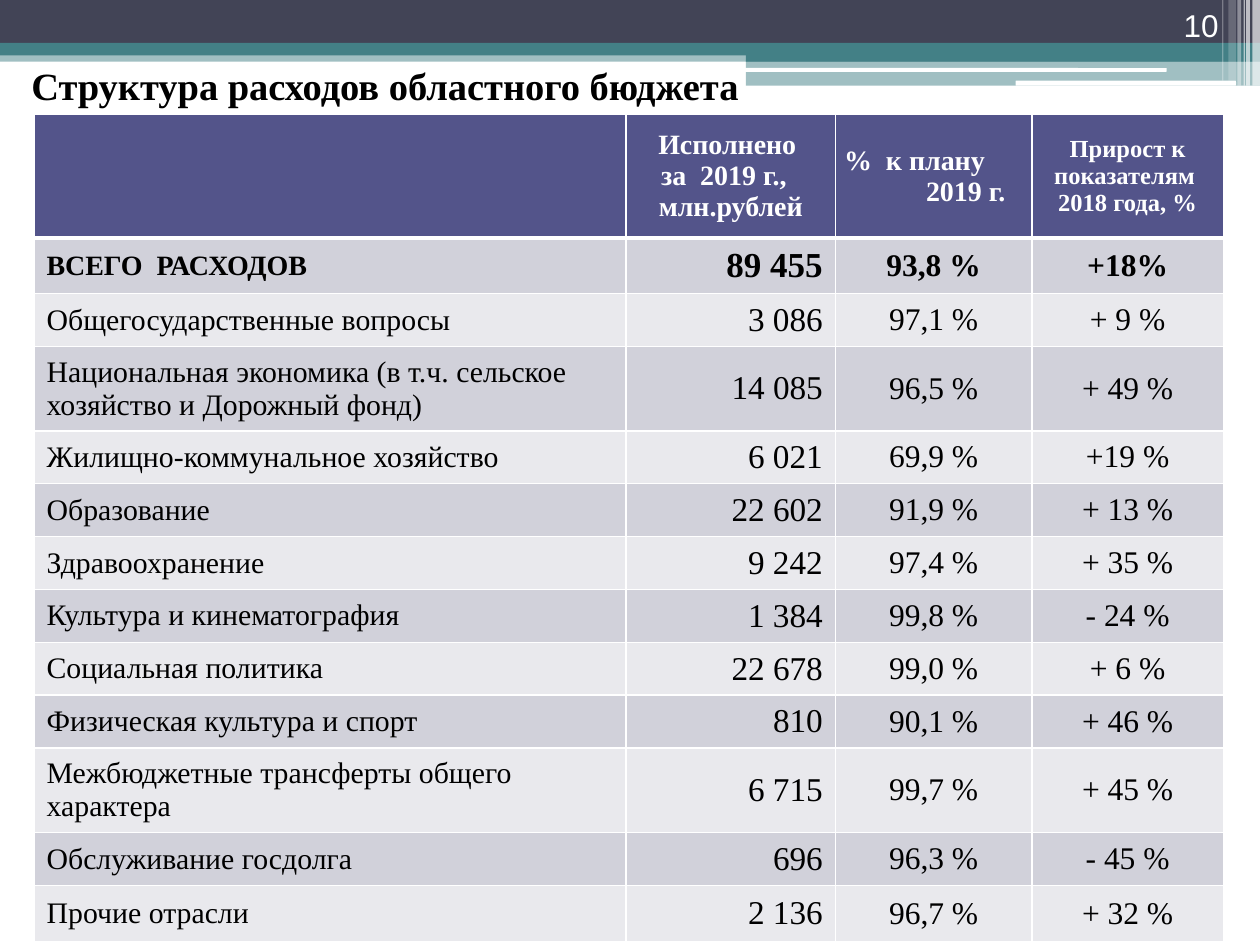
from lxml.etree import SubElement
from pptx import Presentation
from pptx.dml.color import RGBColor
from pptx.enum.shapes import MSO_SHAPE
from pptx.enum.text import MSO_ANCHOR, PP_ALIGN
from pptx.oxml.ns import qn
from pptx.util import Inches, Pt

WHITE = RGBColor(0xFF, 0xFF, 0xFF)
BLACK = RGBColor(0x00, 0x00, 0x00)
SLATE = RGBColor(0x42, 0x44, 0x56)
TEAL = RGBColor(0x43, 0x80, 0x86)
INDIGO = RGBColor(0x53, 0x54, 0x8A)
BAND_DARK = RGBColor(0xD1, 0xD1, 0xDA)
BAND_LIGHT = RGBColor(0xE9, 0xE9, 0xED)
SERIF = "Times New Roman"

deck = Presentation()
deck.slide_width, deck.slide_height = Inches(10), Inches(7.5)
slide = deck.slides.add_slide(deck.slide_layouts[6])

# Grid of 100 columns by 75 rows
COL = deck.slide_width / 100
ROW = deck.slide_height / 75


def place(left, top, width, height):
    return int(left * COL), int(top * ROW), int(width * COL), int(height * ROW)


def write(frame, text, size=18, font=SERIF, color=BLACK, bold=False,
          align=PP_ALIGN.LEFT, hang=None):
    """Fill a frame, one paragraph per line; hang is (left margin, first-line indent)."""
    frame.word_wrap = True
    for number, line in enumerate(text.split("\n")):
        paragraph = frame.add_paragraph() if number else frame.paragraphs[0]
        paragraph.text = line
        paragraph.alignment = align
        if hang:
            properties = paragraph._p.get_or_add_pPr()
            properties.set("marL", str(int(hang[0] * COL)))
            properties.set("indent", str(int(hang[1] * COL)))
        for run in paragraph.runs:
            run.font.size, run.font.name, run.font.bold = Pt(size), font, bold
            run.font.color.rgb = color


# Header bands, white rules and the stripes at the right edge
BAR, RULE = MSO_SHAPE.RECTANGLE, MSO_SHAPE.ROUNDED_RECTANGLE
header_parts = [
    (BAR, 0, 4, 100, 0.9, TEAL, 50),
    (BAR, 0, 0, 100, 3.4, SLATE, 100),
    (BAR, 0, 3.4, 100, 1, TEAL, 100),
    (BAR, 59.2, 3.9, 40.8, 1, TEAL, 100),
    (BAR, 59.2, 4.8, 40.8, 2, TEAL, 50),
    (RULE, 59.1, 5.4, 33.5, 0.3, WHITE, 100),
    (RULE, 80.6, 6.4, 17.5, 0.4, WHITE, 100),
    (BAR, 99.4, 0, 0.6, 6.8, WHITE, 65),
    (BAR, 98.9, 0, 0.3, 6.8, WHITE, 65),
    (BAR, 98.7, 0, 0.1, 6.8, WHITE, 60),
    (BAR, 98.2, 0, 0.3, 6.8, WHITE, 40),
    (BAR, 97.5, 0, 0.6, 6.4, WHITE, 20),
    (BAR, 97, 0, 0.1, 6.4, WHITE, 30),
]
for outline, left, top, width, height, color, opacity in header_parts:
    part = slide.shapes.add_shape(outline, *place(left, top, width, height))
    part.shadow.inherit = False
    part.line.fill.background()
    part.fill.solid()
    part.fill.fore_color.rgb = color
    if opacity < 100:
        tint = part.fill._xPr.find(".//" + qn("a:srgbClr"))
        SubElement(tint, qn("a:alpha"), val=str(opacity * 1000))

# Title
title = slide.shapes.add_textbox(*place(1.5, 4.4, 96.9, 4.7)).text_frame
write(title, "Структура расходов областного бюджета", size=22, bold=True)

# Expenditure table
headings = [
    ("", {}),
    ("Исполнено \nза  2019 г.,  \nмлн.рублей", {"size": 16}),
    ("%  к плану\v2019 г.", {"size": 16, "align": PP_ALIGN.LEFT, "hang": (6.8, -6.5)}),
    ("Прирост к показателям  2018 года, %", {"size": 14}),
]
expenses = [
    ("ВСЕГО  РАСХОДОВ", "89 455", "93,8 %", "+18%"),
    ("Общегосударственные вопросы", "3 086", "97,1 %", "+ 9 %"),
    ("Национальная экономика (в т.ч. сельское хозяйство и Дорожный фонд)",
     "14 085", "96,5 %", "+ 49 %"),
    ("Жилищно-коммунальное хозяйство", "6 021", "69,9 %", "+19 %"),
    ("Образование", "22 602", "91,9 %", "+ 13 %"),
    ("Здравоохранение", "9 242", "97,4 %", "+ 35 %"),
    ("Культура и кинематография", "1 384", "99,8 %", "- 24 %"),
    ("Социальная политика", "22 678", "99,0 %", "+ 6 %"),
    ("Физическая культура и спорт", "810", "90,1 %", "+ 46 %"),
    ("Межбюджетные трансферты общего характера", "6 715", "99,7 %", "+ 45 %"),
    ("Обслуживание госдолга", "696", "96,3 %", "- 45 %"),
    ("Прочие отрасли", "2 136", "96,7 %", "+ 32 %"),
]
column_widths = [47, 16.6, 15.6, 15.2]
row_heights = [9.8, 4.4, 4.2, 6.7] + [4.2] * 6 + [6.7, 4.2, 4.5]
column_aligns = [PP_ALIGN.LEFT, PP_ALIGN.RIGHT, PP_ALIGN.CENTER, PP_ALIGN.CENTER]
total_sizes = [16, 20, 18, 18]
item_sizes = [17, 19, 18, 18]

budget = slide.shapes.add_table(
    len(row_heights), len(column_widths),
    *place(2.7, 9.1, sum(column_widths), sum(row_heights))).table
for column, width in zip(budget.columns, column_widths):
    column.width = int(width * COL)
for row, height in zip(budget.rows, row_heights):
    row.height = int(height * ROW)

for c, (heading, style) in enumerate(headings):
    cell = budget.cell(0, c)
    cell.margin_left = cell.margin_right = int(0.4 * COL)
    write(cell.text_frame, heading,
          **{"color": WHITE, "bold": True, "align": PP_ALIGN.CENTER, **style})

for r, expense in enumerate(expenses, start=1):
    sizes = total_sizes if r == 1 else item_sizes
    for c, value in enumerate(expense):
        write(budget.cell(r, c).text_frame, value, size=sizes[c],
              bold=r == 1, align=column_aligns[c])

# Cell fills and white borders, thicker under the heading row
for r in range(len(row_heights)):
    for c in range(len(column_widths)):
        cell = budget.cell(r, c)
        cell.vertical_anchor = MSO_ANCHOR.MIDDLE
        properties = cell._tc.get_or_add_tcPr()
        for side in ("L", "R", "T", "B"):
            thick = (r, side) in ((0, "B"), (1, "T"))
            border = SubElement(properties, qn("a:ln" + side), w=str(Pt(3 if thick else 1)))
            paint = SubElement(border, qn("a:solidFill"))
            SubElement(paint, qn("a:srgbClr"), val=str(WHITE))
        cell.fill.solid()
        cell.fill.fore_color.rgb = INDIGO if r == 0 else BAND_DARK if r % 2 else BAND_LIGHT

# Slide number
number_frame = slide.shapes.add_textbox(*place(89.4, 0, 8.3, 4)).text_frame
number_frame.vertical_anchor = MSO_ANCHOR.BOTTOM
write(number_frame, "10", font="Arial", color=WHITE, align=PP_ALIGN.RIGHT)

deck.save("out.pptx")
